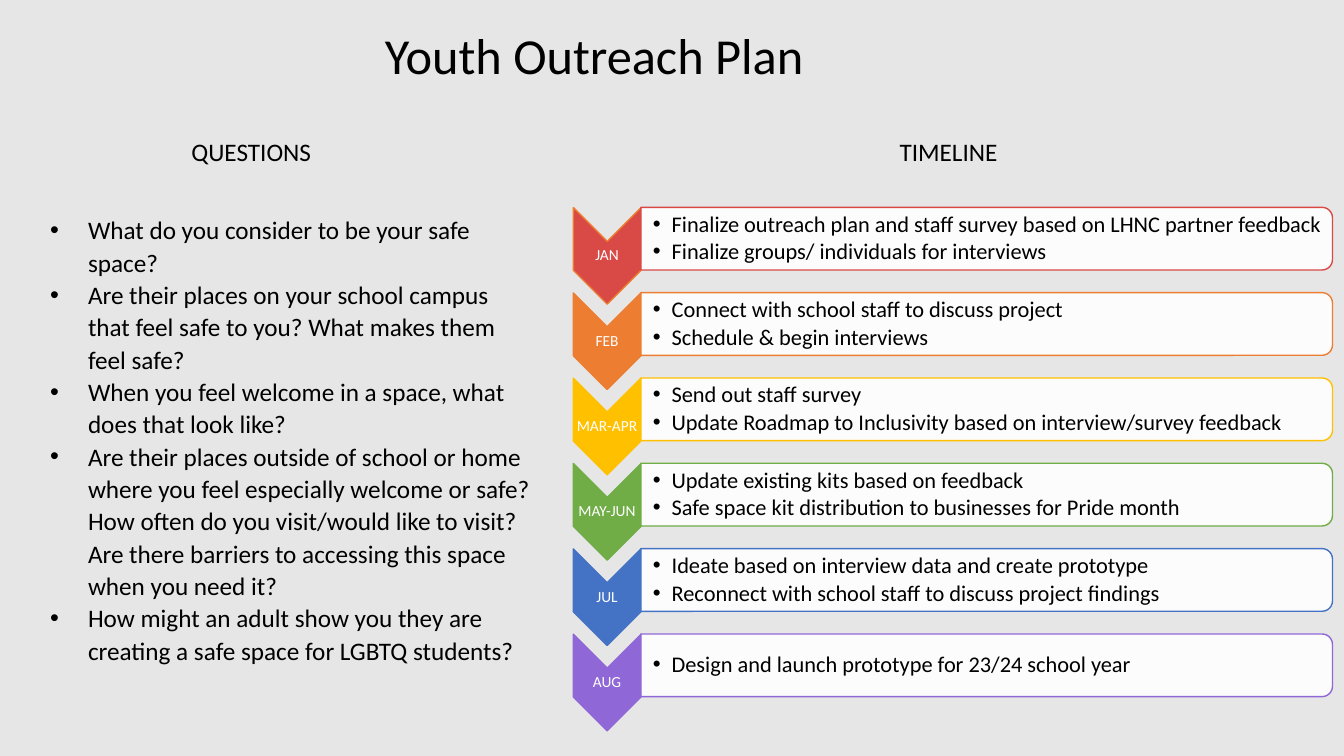
import pptx
import pptx.util
import pptx.dml.color
import pptx.enum.shapes
import pptx.enum.text
import pptx.oxml
import pptx.oxml.ns

Pt = pptx.util.Pt
RGBColor = pptx.dml.color.RGBColor
Shape = pptx.enum.shapes.MSO_SHAPE
Anchor = pptx.enum.text.MSO_ANCHOR
Align = pptx.enum.text.PP_ALIGN
AutoSize = pptx.enum.text.MSO_AUTO_SIZE

BACKGROUND = RGBColor(0xE7, 0xE6, 0xE6)
BLACK = RGBColor(0, 0, 0)
WHITE = RGBColor(0xFF, 0xFF, 0xFF)
RED = RGBColor(0xD9, 0x49, 0x45)
ORANGE = RGBColor(0xED, 0x7D, 0x31)
GOLD = RGBColor(0xFF, 0xC0, 0x00)
GREEN = RGBColor(0x70, 0xAD, 0x47)
BLUE = RGBColor(0x44, 0x72, 0xC4)
PURPLE = RGBColor(0x8F, 0x67, 0xD7)

QUESTIONS = [
    "What do you consider to be your safe space?",
    "Are their places on your school campus that feel safe to you? What makes them feel safe?",
    "When you feel welcome in a space, what does that look like?",
    "Are their places outside of school or home where you feel especially welcome or safe? "
    "How often do you visit/would like to visit? "
    "Are there barriers to accessing this space when you need it?",
    "How might an adult show you they are creating a safe space for LGBTQ students?",
]

TIMELINE = [
    ("JAN", RED, ORANGE, [
        "Finalize outreach plan and staff survey based on LHNC partner feedback",
        "Finalize groups/ individuals for interviews"]),
    ("FEB", ORANGE, ORANGE, [
        "Connect with school staff to discuss project",
        "Schedule & begin interviews"]),
    ("MAR-APR", GOLD, GOLD, [
        "Send out staff survey",
        "Update Roadmap to Inclusivity based on interview/survey feedback"]),
    ("MAY-JUN", GREEN, GREEN, [
        "Update existing kits based on feedback",
        "Safe space kit distribution to businesses for Pride month"]),
    ("JUL", BLUE, BLUE, [
        "Ideate based on interview data and create prototype",
        "Reconnect with school staff to discuss project findings"]),
    ("AUG", PURPLE, PURPLE, [
        "Design and launch prototype for 23/24 school year"]),
]

FIRST_STEP_TOP = 148.1
STEP_PITCH = 60.95


class OutreachSlide:
    """Draws the elements of the outreach plan in one shared style."""

    def __init__(self, slide, font="Calibri"):
        self.slide = slide
        self.font = font
        slide.background.fill.solid()
        slide.background.fill.fore_color.rgb = BACKGROUND

    def text(self, left, top, width, height, lines, size, color=BLACK, wrap=True,
             insets=None, align=Align.LEFT, spacing=None, after=None, indent=None):
        box = self.slide.shapes.add_textbox(Pt(left), Pt(top), Pt(width), Pt(height))
        frame = box.text_frame
        frame.word_wrap = wrap
        if insets:
            (frame.margin_left, frame.margin_top,
             frame.margin_right, frame.margin_bottom) = map(Pt, insets)
            frame.vertical_anchor = Anchor.MIDDLE
        else:
            frame.auto_size = AutoSize.SHAPE_TO_FIT_TEXT
        for index, line in enumerate(lines):
            paragraph = frame.add_paragraph() if index else frame.paragraphs[0]
            paragraph.alignment = align
            if spacing:
                paragraph.line_spacing = spacing
            if after:
                paragraph.space_after = Pt(after)
            if indent:
                self.bullet(paragraph, indent)
            run = paragraph.add_run()
            run.text = line
            run.font.name = self.font
            run.font.size = Pt(size)
            run.font.color.rgb = color

    def bullet(self, paragraph, indent):
        properties = paragraph._p.get_or_add_pPr()
        properties.set("marL", str(Pt(indent)))
        properties.set("indent", str(-Pt(indent)))
        for tag, attribute, value in (("a:buFont", "typeface", "Arial"),
                                      ("a:buChar", "char", "•")):
            mark = pptx.oxml.ns.qn(tag)
            element = properties.makeelement(mark, {attribute: value})
            properties.append(element)

    def turned_shape(self, kind, center_x, center_y, width, height, fill, line, opacity=100):
        shape = self.slide.shapes.add_shape(
            kind, Pt(center_x - width / 2), Pt(center_y - height / 2), Pt(width), Pt(height))
        shape.rotation = 90
        shape.shadow.inherit = False
        shape.fill.solid()
        shape.fill.fore_color.rgb = fill
        shape.line.color.rgb = line
        shape.line.width = Pt(1)
        if opacity < 100:
            color = shape.fill._xPr.find(".//" + pptx.oxml.ns.qn("a:srgbClr"))
            alpha = color.makeelement(pptx.oxml.ns.qn("a:alpha"), {"val": str(opacity * 1000)})
            color.append(alpha)

    def step(self, top, month, color, edge, tasks):
        self.turned_shape(Shape.CHEVRON, 433.7, top + 34.7, 69, 48.3, color, edge)
        self.text(409.5, top + 24.3, 48.3, 20.7, [month], 11, WHITE,
                  insets=(0.6, 0.6, 0.6, 0.6), align=Align.CENTER, spacing=0.9)
        self.turned_shape(Shape.ROUND_2_SAME_RECTANGLE, 704.8, top + 22.4, 44.8, 494,
                          WHITE, color, opacity=90)
        self.text(457.8, top + 2.2, 491.8, 40.4, tasks, 16,
                  insets=(8.5, 0.7, 0.7, 0.7), spacing=0.9, after=2.4, indent=13.5)


def main():
    presentation = pptx.Presentation()
    presentation.slide_width = Pt(960)
    presentation.slide_height = Pt(540)
    plan = OutreachSlide(presentation.slides.add_slide(presentation.slide_layouts[6]))

    plan.text(267.8, 13.7, 472.3, 51, ["Youth Outreach Plan"], 36)
    for number, (month, color, edge, tasks) in enumerate(TIMELINE):
        plan.step(FIRST_STEP_TOP + number * STEP_PITCH, month, color, edge, tasks)
    plan.text(28.8, 148.3, 357, 355.7, QUESTIONS, 18, spacing=1.07, indent=27)
    for heading, left, width in (("QUESTIONS", 129.6, 110), ("TIMELINE", 635.5, 91)):
        plan.text(left, 93.6, width, 29, [heading], 18, wrap=False)

    presentation.save("out.pptx")


if __name__ == "__main__":
    main()
